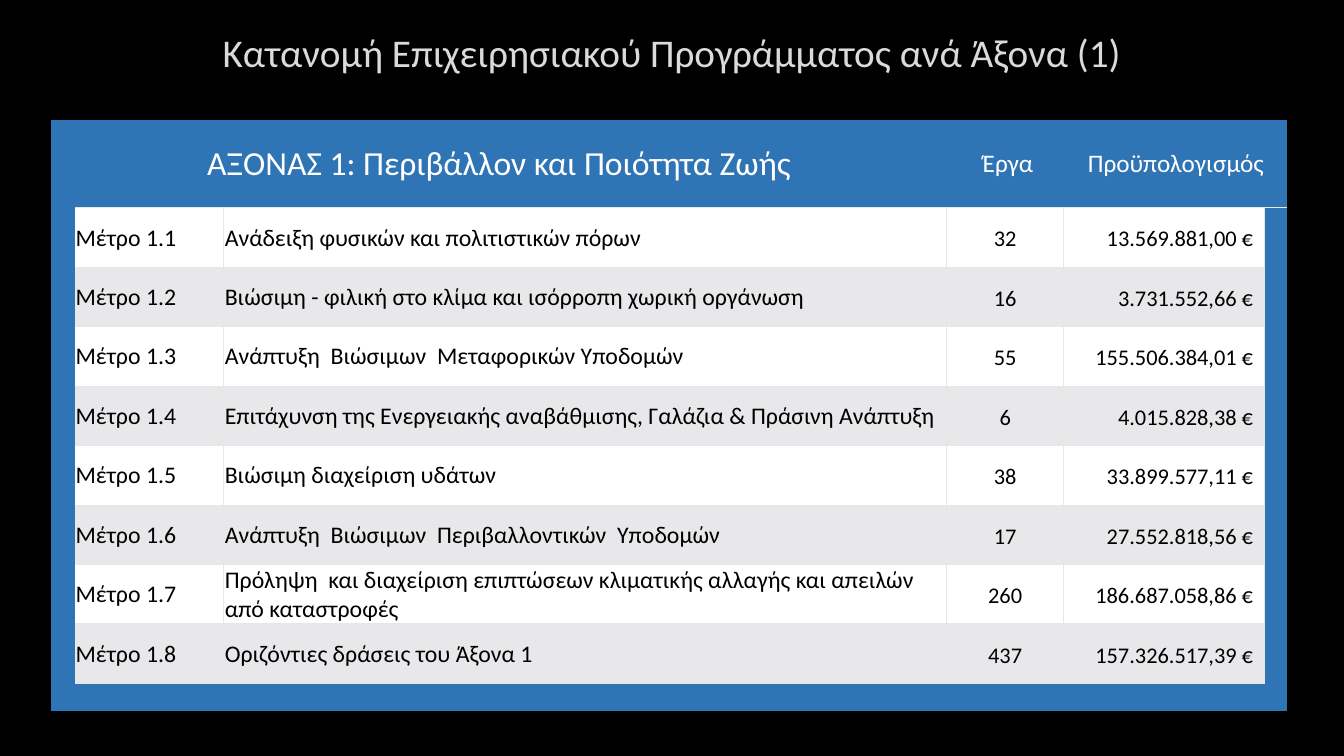
import pptx
import pptx.dml.color
import pptx.enum.text
import pptx.oxml
import pptx.oxml.ns
import pptx.util
from pptx.dml.color import RGBColor
from pptx.util import Inches, Pt

TITLE = "Κατανομή Επιχειρησιακού Προγράμματος ανά Άξονα (1)"
AXIS = "ΑΞΟΝΑΣ 1: Περιβάλλον και Ποιότητα Ζωής"
PROJECTS = " Έργα"
BUDGET = " Προϋπολογισμός"
MEASURES = [
    ("Μέτρο 1.1", "Ανάδειξη φυσικών και πολιτιστικών πόρων", "32", "13.569.881,00 €"),
    ("Μέτρο 1.2", "Βιώσιμη - φιλική στο κλίμα και ισόρροπη χωρική οργάνωση", "16",
     "3.731.552,66 €"),
    ("Μέτρο 1.3", "Ανάπτυξη  Βιώσιμων  Μεταφορικών Υποδομών", "55", "155.506.384,01 €"),
    ("Μέτρο 1.4", "Επιτάχυνση της Ενεργειακής αναβάθμισης, Γαλάζια & Πράσινη Ανάπτυξη",
     "6", "4.015.828,38 €"),
    ("Μέτρο 1.5", "Βιώσιμη διαχείριση υδάτων", "38", "33.899.577,11 €"),
    ("Μέτρο 1.6", "Ανάπτυξη  Βιώσιμων  Περιβαλλοντικών  Υποδομών", "17",
     "27.552.818,56 €"),
    ("Μέτρο 1.7", "Πρόληψη  και διαχείριση επιπτώσεων κλιματικής αλλαγής και απειλών "
     "από καταστροφές", "260", "186.687.058,86 €"),
    ("Μέτρο 1.8", "Οριζόντιες δράσεις του Άξονα 1", "437", "157.326.517,39 €"),
]
COLUMN_WIDTHS = [0.23, 1.48, 7.17, 1.16, 1.99, 0.23]
ROW_HEIGHTS = [0.87] + [0.59] * len(MEASURES) + [0.28]

FONT = "Calibri"
BLACK = RGBColor(0x00, 0x00, 0x00)
WHITE = RGBColor(0xFF, 0xFF, 0xFF)
TITLE_GREY = RGBColor(0xDA, 0xDA, 0xDA)
BLUE = RGBColor(0x2F, 0x75, 0xB5)
BAND = RGBColor(0xE8, 0xE8, 0xEA)
RULE = RGBColor(0xE7, 0xE6, 0xE6)
PLAIN_STYLE = "{2D5ABB26-0587-4C30-8999-92F81FD0307C}"

ALIGN = pptx.enum.text.PP_ALIGN
MIDDLE = pptx.enum.text.MSO_ANCHOR.MIDDLE
# alignment, text size, whether the cell has wide side margins, ruled sides
BODY_COLUMNS = [
    (ALIGN.LEFT, 17, False, "RTB"),
    (ALIGN.LEFT, 17, False, "LRTB"),
    (ALIGN.CENTER, 16, True, "LRTB"),
    (ALIGN.RIGHT, 16, True, "LRTB"),
]


def add_run(para, text, size, color):
    span = para.add_run()
    span.text = text
    span.font.name = FONT
    span.font.size = Pt(size)
    span.font.color.rgb = color
    return span


def style_cell(cell, fill, sides="", wide=False):
    """Set the ruled sides, the fill and the margins of a cell."""
    properties = cell._tc.get_or_add_tcPr()
    for side in sides:
        properties.append(pptx.oxml.parse_xml(
            f'<a:ln{side} {pptx.oxml.ns.nsdecls("a")} w="6350"><a:solidFill>'
            f'<a:srgbClr val="{RULE}"/></a:solidFill></a:ln{side}>'))
    cell.fill.solid()
    cell.fill.fore_color.rgb = fill
    cell.vertical_anchor = MIDDLE
    cell.margin_left = cell.margin_right = Inches(0.11 if wide else 0.01)
    cell.margin_top = Inches(0.02 if wide else 0.01)
    cell.margin_bottom = 0
    cell.text_frame.paragraphs[0].font.size = Pt(10)


def write_cell(cell, text, size, color, align):
    para = cell.text_frame.paragraphs[0]
    para.alignment = align
    add_run(para, text, size, color)
    return para


def add_title(page):
    box = page.shapes.title
    box.left, box.top, box.width, box.height = map(Inches, (1, 0.16, 11.32, 0.71))
    box.text_frame.vertical_anchor = MIDDLE
    para = box.text_frame.paragraphs[0]
    para.alignment = ALIGN.CENTER
    span = add_run(para, TITLE, 28, TITLE_GREY)
    span.font._element.insert(0, pptx.oxml.parse_xml(
        f'<a:ln {pptx.oxml.ns.nsdecls("a")} w="9525"><a:solidFill><a:srgbClr val="404040">'
        '<a:alpha val="10000"/></a:srgbClr></a:solidFill></a:ln>'))


def add_measures_table(page):
    frame = page.shapes.add_table(
        len(ROW_HEIGHTS), len(COLUMN_WIDTHS), Inches(0.51), Inches(1.19),
        Inches(sum(COLUMN_WIDTHS)), Inches(sum(ROW_HEIGHTS)))
    table = frame.table
    table.first_row = table.horz_banding = False
    table._tbl.tblPr.find(pptx.oxml.ns.qn("a:tableStyleId")).text = PLAIN_STYLE
    for column, width in zip(table.columns, COLUMN_WIDTHS):
        column.width = Inches(width)
    for row, height in zip(table.rows, ROW_HEIGHTS):
        row.height = Inches(height)

    last_row, last_column = len(ROW_HEIGHTS) - 1, len(COLUMN_WIDTHS) - 1
    for column in range(len(COLUMN_WIDTHS)):
        style_cell(table.cell(0, column), BLUE, "B" if column in (3, 4) else "")
        style_cell(table.cell(last_row, column), BLUE, "T" if 0 < column < last_column else "")
    table.cell(0, 0).merge(table.cell(0, 2))
    table.cell(0, 4).merge(table.cell(0, 5))
    write_cell(table.cell(0, 0), AXIS, 24, WHITE, ALIGN.CENTER)
    write_cell(table.cell(0, 3), PROJECTS, 18, WHITE, ALIGN.CENTER)
    budget = write_cell(table.cell(0, 4), BUDGET, 18, WHITE, ALIGN.CENTER)
    add_run(budget, " ", 16, BLACK)

    for row, measure in enumerate(MEASURES, start=1):
        style_cell(table.cell(row, 0), BLUE)
        style_cell(table.cell(row, last_column), BLUE, "L")
        fill = WHITE if row % 2 else BAND
        for column, (text, look) in enumerate(zip(measure, BODY_COLUMNS), start=1):
            align, size, wide, sides = look
            cell = table.cell(row, column)
            style_cell(cell, fill, sides, wide)
            para = write_cell(cell, text, size, BLACK, align)
            if wide:
                para.line_spacing = 1.07
                para.space_after = Pt(8)


def main():
    deck = pptx.Presentation()
    deck.slide_width, deck.slide_height = Inches(13.33), Inches(7.5)
    page = deck.slides.add_slide(deck.slide_layouts[5])
    page.background.fill.solid()
    page.background.fill.fore_color.rgb = BLACK
    add_measures_table(page)
    add_title(page)
    deck.save("out.pptx")


if __name__ == "__main__":
    main()
